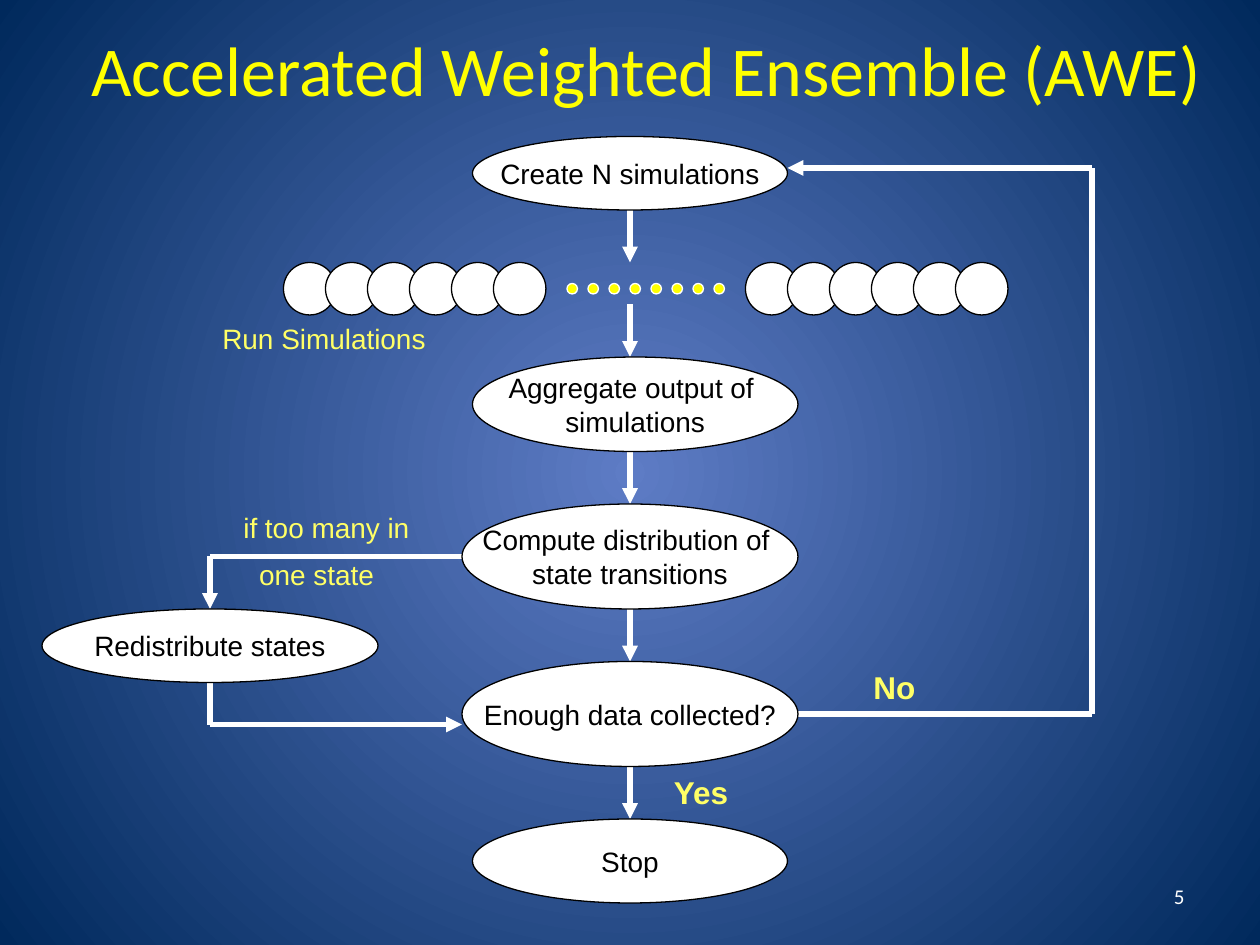
from lxml import etree
from pptx import Presentation
from pptx.dml.color import RGBColor
from pptx.enum.shapes import MSO_CONNECTOR, MSO_SHAPE
from pptx.enum.text import MSO_ANCHOR, PP_ALIGN
from pptx.oxml.ns import qn
from pptx.util import Emu, Pt

PX = 9525  # EMU per px, 96 px to the inch
OVAL, STRAIGHT = MSO_SHAPE.OVAL, MSO_CONNECTOR.STRAIGHT
LEFT, CENTER, RIGHT = PP_ALIGN.LEFT, PP_ALIGN.CENTER, PP_ALIGN.RIGHT
TOP, MIDDLE = MSO_ANCHOR.TOP, MSO_ANCHOR.MIDDLE
WHITE, BLACK, YELLOW, PALE_YELLOW = "FFFFFF", "000000", "FFFF00", "FFFF66"

STEPS = [
    ((360, 104, 240, 56), ["Create N simulations"]),
    ((360, 272, 248, 72), ["Aggregate output of ", "simulations"]),
    ((352, 384, 256, 80), ["Compute distribution of ", "state transitions"]),
    ((32, 464, 256, 56), ["Redistribute states"]),
    ((352, 504, 256, 80), ["Enough data collected?"]),
    ((360, 624, 240, 64), ["Stop"]),
]
# Each route is a run of points; its last segment carries the arrowhead.
DOWN_ARROWS = [[(480, y), (480, y + 40)] for y in (160, 232, 344, 464, 584)]
ROUTES = DOWN_ARROWS + [
    [(352, 424), (160, 424), (160, 464)],
    [(160, 520), (160, 552), (352, 552)],
    [(608, 544), (832, 544), (832, 128), (600, 128)],
]
LABELS = [
    ((160, 240, 288, 36), ["Run Simulations"], {"size": 16}),
    ((176, 384, 288, 74), ["if too many in", "one state"], {"size": 16}),
    ((656, 504, 288, 38), ["No"], {"size": 18, "bold": True}),
    ((504, 584, 288, 38), ["Yes"], {"size": 18, "bold": True}),
]


def px(*values):
    return [Emu(v * PX) for v in values]


def rgb(color):
    return RGBColor.from_string(color)


def write(tf, lines, color, size=16, font="Arial", bold=False,
          align=LEFT, anchor=TOP, wrap=True):
    tf.word_wrap = wrap
    tf.vertical_anchor = anchor
    for i, line in enumerate(lines):
        p = tf.paragraphs[0] if i == 0 else tf.add_paragraph()
        p.alignment = align
        r = p.add_run()
        r.text = line
        for name, value in {"name": font, "size": Pt(size), "bold": bold}.items():
            setattr(r.font, name, value)
        r.font.color.rgb = rgb(color)


def add_text(slide, box, lines, color, **text_format):
    tf = slide.shapes.add_textbox(*px(*box)).text_frame
    write(tf, lines, color, **text_format)
    return tf


def add_oval(slide, box, fill=WHITE, line=BLACK):
    sp = slide.shapes.add_shape(OVAL, *px(*box))
    sp.shadow.inherit = False
    sp.fill.solid()
    sp.fill.fore_color.rgb = rgb(fill)
    sp.line.color.rgb = rgb(line)
    sp.line.width = Pt(0.75)
    return sp


def add_oval_row(slide, left, top, size, step, count, **colors):
    for i in range(count):
        add_oval(slide, (left + i * step, top, size, size), **colors)


def add_route(slide, points):
    """Join the points with straight lines and end in an arrowhead."""
    for start, end in zip(points, points[1:]):
        line = slide.shapes.add_connector(STRAIGHT, *px(*start, *end))
        line.line.color.rgb = rgb(WHITE)
        line.line.width = Pt(3)
        etree.SubElement(line._element.spPr, qn("a:effectLst"))
    ln = line.line._get_or_add_ln()
    etree.SubElement(ln, qn("a:tailEnd"), type="triangle")


def set_background(slide, inner, outer):
    """Fill with a circular gradient from the centre outwards."""
    fill = slide.background.fill
    fill.gradient()
    for stop, color in zip(fill.gradient_stops, (inner, outer)):
        stop.color.rgb = rgb(color)
    grad = next(slide._element.iter(qn("a:gradFill")))
    grad.remove(grad.find(qn("a:lin")))
    circle = etree.SubElement(grad, qn("a:path"), {"path": "circle"})
    etree.SubElement(circle, qn("a:fillToRect"), dict.fromkeys("ltrb", "50000"))


def set_title(slide, box, text):
    title = slide.shapes.title
    title.left, title.top, title.width, title.height = px(*box)
    write(title.text_frame, [text], YELLOW, size=40, font="Calibri",
          align=CENTER, anchor=MIDDLE)


def main():
    prs = Presentation()
    prs.slide_width, prs.slide_height = px(960, 720)
    slide = prs.slides.add_slide(prs.slide_layouts[5])
    set_background(slide, "5E7CC5", "00295C")
    set_title(slide, (48, 0, 888, 104), "Accelerated Weighted Ensemble (AWE)")

    for points in ROUTES:
        add_route(slide, points)
    for box, lines in STEPS:
        write(add_oval(slide, box).text_frame, lines, BLACK,
              align=CENTER, anchor=MIDDLE, wrap=False)
    for left in (216, 568):
        add_oval_row(slide, left, 200, 40, 32, 6)
    add_oval_row(slide, 432, 216, 8, 16, 8, fill=YELLOW, line=WHITE)

    for box, lines, text_format in LABELS:
        tf = add_text(slide, box, lines, PALE_YELLOW, **text_format)
        for p in tf.paragraphs[1:]:
            p.space_before = Pt(8)
            p._p.get_or_add_pPr().set("marL", str(12 * PX))
    add_text(slide, (688, 664, 224, 38), ["5"], WHITE, size=12, font="Calibri",
             align=RIGHT, anchor=MIDDLE)
    prs.save("out.pptx")


if __name__ == "__main__":
    main()
